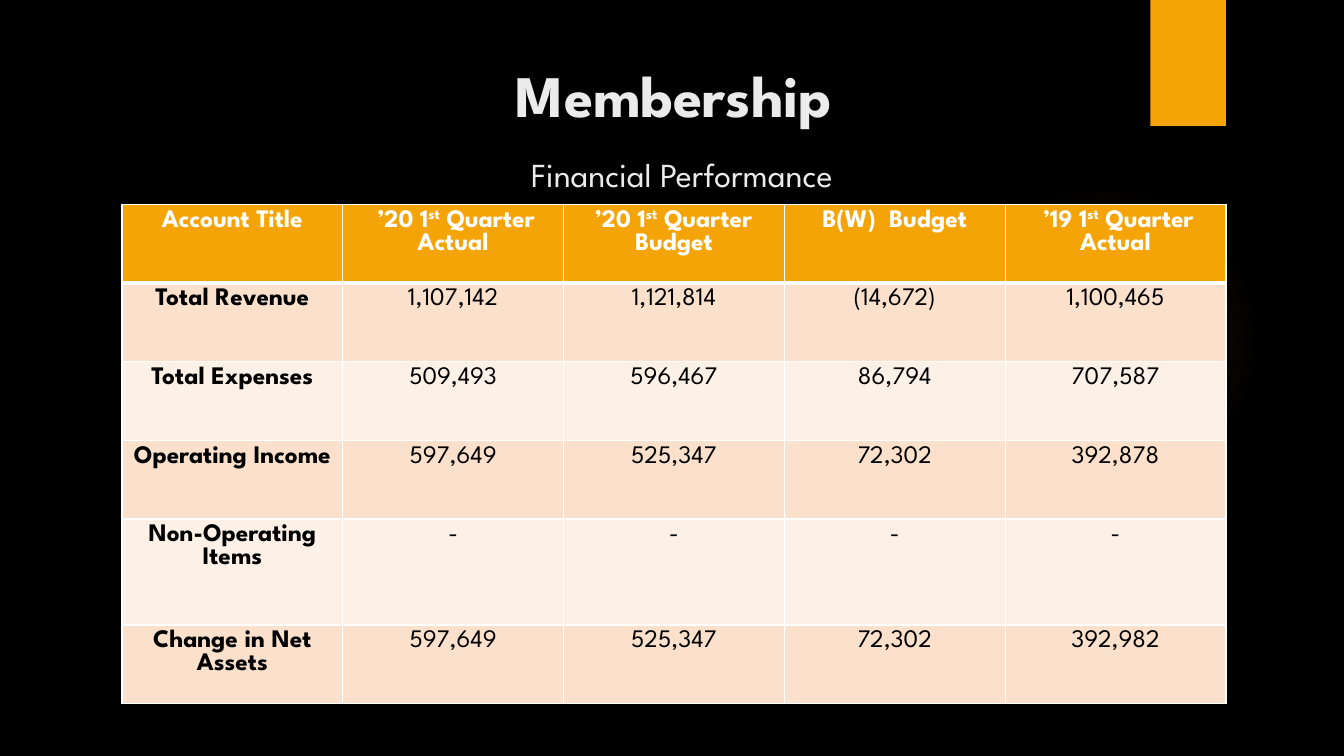
import pptx
import pptx.dml.color
import pptx.enum.shapes
import pptx.enum.text
import pptx.oxml
import pptx.util
from pptx.util import Inches

AMBER, WHITE, BLACK = "F5A408", "FFFFFF", "000000"
BANDS = ["FBE0CC", "FDF0E7"]
NS = 'xmlns:a="http://schemas.openxmlformats.org/drawingml/2006/main"'


def rgb(value):
    return pptx.dml.color.RGBColor.from_string(value)


def write(paragraph, text, size=18, color=BLACK, bold=False, baseline=0):
    paragraph.alignment = pptx.enum.text.PP_ALIGN.CENTER
    run = paragraph.add_run()
    run.text = text
    run.font.name = "League Spartan"
    run.font.size = pptx.util.Pt(size)
    run.font.bold = bold
    run.font.color.rgb = rgb(color)
    if baseline:
        run._r.get_or_add_rPr().set("baseline", str(baseline * 1000))


presentation = pptx.Presentation()
presentation.slide_width = Inches(13.33)
presentation.slide_height = Inches(7.5)
slide = presentation.slides.add_slide(presentation.slide_layouts[6])
slide.background.fill.solid()
slide.background.fill.fore_color.rgb = rgb(BLACK)

# Faint round glow
glow = slide.shapes.add_shape(pptx.enum.shapes.MSO_SHAPE.OVAL,
                              Inches(9.41), Inches(1.83), Inches(3.08), Inches(3.08))
glow.shadow.inherit = False
glow.line.fill.background()
stops = "".join(
    f'<a:gs pos="{position}000"><a:srgbClr val="FAC96A"><a:alpha val="{alpha}000"/></a:srgbClr></a:gs>'
    for position, alpha in [(0, 7), (36, 6), (69, 0)])
glow._element.spPr.insert(2, pptx.oxml.parse_xml(
    f'<a:gradFill {NS}><a:gsLst>{stops}</a:gsLst><a:path path="circle">'
    '<a:fillToRect l="50000" t="50000" r="50000" b="50000"/></a:path></a:gradFill>'))

# Amber tab at the top
tab = slide.shapes.add_shape(pptx.enum.shapes.MSO_SHAPE.RECTANGLE,
                             Inches(11.41), 0, Inches(0.75), Inches(1.25))
tab.shadow.inherit = False
tab.fill.solid()
tab.fill.fore_color.rgb = rgb(AMBER)
tab.line.fill.background()

# Title and subtitle
heading = slide.shapes.add_textbox(Inches(1.54), Inches(0.5), Inches(10.29), Inches(1.53)).text_frame
heading.word_wrap = True
heading.vertical_anchor = pptx.enum.text.MSO_ANCHOR.BOTTOM
title = heading.paragraphs[0]
title.line_spacing = pptx.util.Pt(50)
write(title, "Membership", size=42, color="EBEBEB", bold=True)
title.add_line_break()
write(title, " ", size=42, color="EBEBEB", bold=True)
write(title, "Financial Performance", size=24, color="EBEBEB")

# Financial table: a quarter heading is (year, second line)
headings = ["Account Title", (" ’20 1", "Actual"), ("’20 1", "Budget"),
            "B(W)  Budget", (" ’19 1", "Actual")]
accounts = [
    ["Total Revenue", "1,107,142", "1,121,814", "(14,672)", "1,100,465"],
    ["Total Expenses", "509,493", "596,467", "86,794", "707,587"],
    ["Operating Income", "597,649", "525,347", "72,302", "392,878"],
    ["Non-Operating Items", "-", "-", "-", "-"],
    ["Change in Net Assets", "597,649", "525,347", "72,302", "392,982"],
]
row_heights = [0.78, 0.78, 0.78, 0.78, 1.05, 0.78]
finances = slide.shapes.add_table(6, 5, Inches(1.21), Inches(2.03),
                                  Inches(10.95), Inches(sum(row_heights))).table
for column in finances.columns:
    column.width = Inches(2.19)
for row, height in zip(finances.rows, row_heights):
    row.height = Inches(height)

for row_index, values in enumerate([headings] + accounts):
    is_header = row_index == 0
    for column_index, value in enumerate(values):
        cell = finances.cell(row_index, column_index)
        cell.fill.solid()
        cell.fill.fore_color.rgb = rgb(AMBER if is_header else BANDS[(row_index - 1) % 2])
        style = {"color": WHITE if is_header else BLACK,
                 "bold": is_header or column_index == 0}
        first_line = cell.text_frame.paragraphs[0]
        if isinstance(value, tuple):
            year, second_line = value
            write(first_line, year, **style)
            write(first_line, "st", baseline=30, **style)
            write(first_line, " Quarter", **style)
            write(cell.text_frame.add_paragraph(), second_line, **style)
        else:
            write(first_line, value, **style)

        # White rules, thicker around the header's lower edge
        widths = {"lnL": 1, "lnR": 1, "lnT": 3 if row_index == 1 else 1,
                  "lnB": 3 if is_header else 1}
        for position, (edge, width) in enumerate(widths.items()):
            cell._tc.get_or_add_tcPr().insert(position, pptx.oxml.parse_xml(
                f'<a:{edge} {NS} w="{width * 12700}"><a:solidFill>'
                f'<a:srgbClr val="{WHITE}"/></a:solidFill></a:{edge}>'))

presentation.save("out.pptx")
